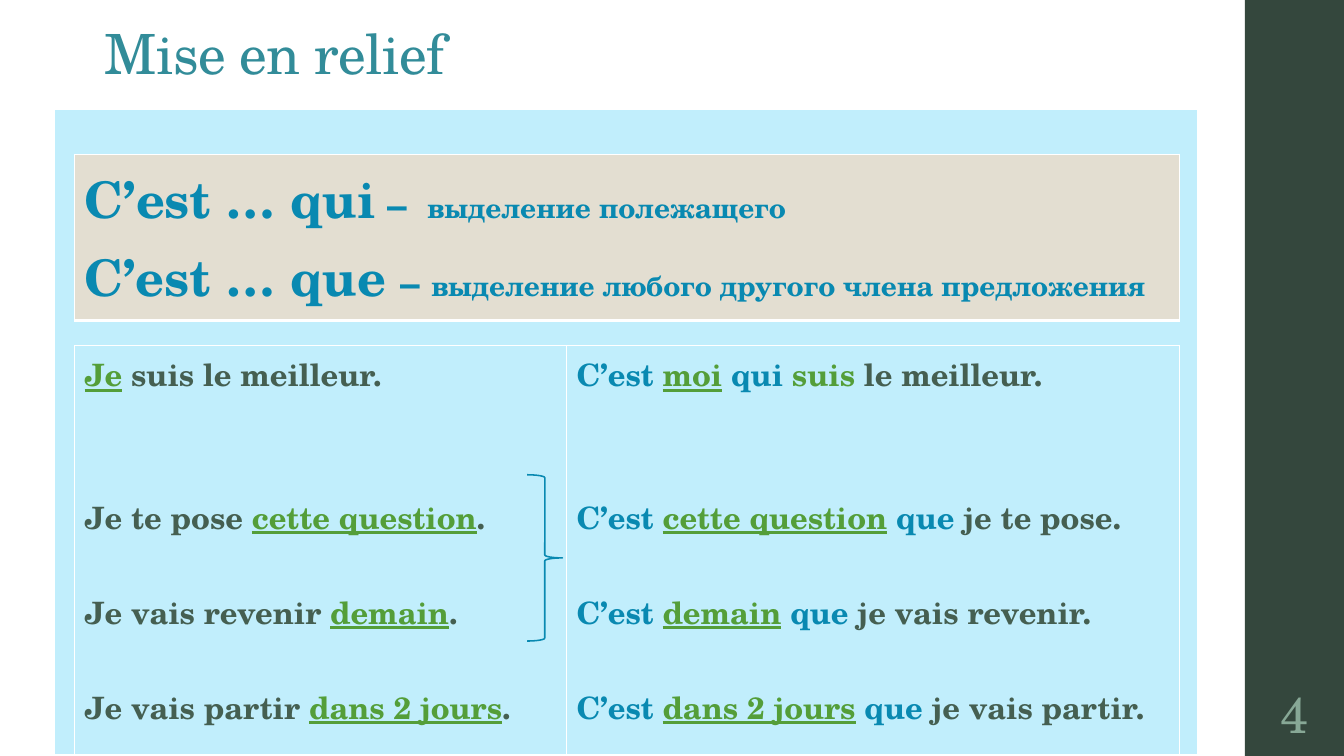
from dataclasses import dataclass
from typing import NamedTuple

from lxml.etree import SubElement
from pptx import Presentation
from pptx.dml.color import RGBColor
from pptx.enum.shapes import MSO_SHAPE as Preset
from pptx.enum.text import MSO_ANCHOR as Anchor, PP_ALIGN as Align
from pptx.oxml.ns import qn
from pptx.util import Inches, Pt


@dataclass(frozen=True)
class Theme:
    font: str = "TeX Gyre Schola"
    title: str = "328C99"
    sidebar: str = "34473D"
    number: str = "87A896"
    panel: str = "C1EEFC"
    rule: str = "E3DED1"
    frame: str = "FFFFFF"
    accent: str = "0989B1"
    stress: str = "549E39"
    body: str = "455F51"
    title_size: float = 39.6
    large: float = 36
    dash: float = 28
    gap: float = 24
    example: float = 22
    note: float = 20
    example_line: float = 33.9


class Box(NamedTuple):
    """Left, top, width and height as percentages of the slide."""
    left: float
    top: float
    width: float
    height: float


class Span(NamedTuple):
    text: str
    color: str
    size: float
    underline: bool = False


class Line(NamedTuple):
    spans: list[Span]
    lines_before: int = 0


THEME = Theme()
SIDEBAR = Box(92.63, 0, 7.37, 100)
TITLE = Box(7.05, 2.8, 84.45, 12)
PANEL = Box(4.05, 14.53, 85.05, 85.47)
RULES = Box(5.55, 20.4, 82.2, 22)
EXAMPLES = Box(5.55, 45.73, 82.2, 54.27)
EXAMPLE_COLUMNS = (36.6, 45.6)
BRACE = Box(39.22, 62.8, 2.63, 22)
NUMBER = Box(92.63, 90, 7.37, 8.67)

prs = Presentation()
prs.slide_width, prs.slide_height = Inches(13.333), Inches(7.5)
slide = prs.slides.add_slide(prs.slide_layouts[5])


def across(share: float) -> int:
    return round(prs.slide_width * share / 100)


def down(share: float) -> int:
    return round(prs.slide_height * share / 100)


def emu(box: Box) -> tuple[int, int, int, int]:
    return across(box.left), down(box.top), across(box.width), down(box.height)


def rgb(color: str) -> RGBColor:
    return RGBColor.from_string(color)


def write(paragraph, text: str, *, color: str, size: float, bold: bool = False,
          underline: bool = False, tracking: float = 0) -> None:
    run = paragraph.add_run()
    run.text = text
    font = run.font
    font.name, font.size, font.bold = THEME.font, Pt(size), bold
    font.underline = underline
    font.color.rgb = rgb(color)
    if tracking:
        run._r.get_or_add_rPr().set("spc", str(round(tracking * 100)))


def write_lines(frame, lines: list[Line]) -> None:
    for index, line in enumerate(lines):
        paragraph = frame.add_paragraph() if index else frame.paragraphs[0]
        paragraph.space_before = Pt(line.lines_before * THEME.example_line)
        for span in line.spans:
            write(paragraph, span.text, color=span.color, size=span.size,
                  bold=True, underline=span.underline)


def frame_cell(cell) -> None:
    """White cell border, heavier along the bottom."""
    properties = cell._tc.get_or_add_tcPr()
    for side, width in (("L", 1), ("R", 1), ("T", 1), ("B", 3)):
        border = SubElement(properties, qn(f"a:ln{side}"), w=str(Pt(width)))
        fill = SubElement(border, qn("a:solidFill"))
        SubElement(fill, qn("a:srgbClr"), val=THEME.frame)


def add_row(box: Box, columns: tuple[float, ...], fill: str,
            contents: list[list[Line]]) -> None:
    """One-row table with a list of lines in each cell."""
    table = slide.shapes.add_table(1, len(columns), *emu(box)).table
    for column, share in zip(table.columns, columns):
        column.width = across(share)
    for cell, lines in zip(table.rows[0].cells, contents):
        frame_cell(cell)
        cell.fill.solid()
        cell.fill.fore_color.rgb = rgb(fill)
        write_lines(cell.text_frame, lines)


def add_preset(preset: Preset, box: Box, *, fill: str = "", line: str = "") -> None:
    shape = slide.shapes.add_shape(preset, *emu(box))
    shape.shadow.inherit = False
    if fill:
        shape.fill.solid()
        shape.fill.fore_color.rgb = rgb(fill)
    else:
        shape.fill.background()
    if line:
        shape.line.color.rgb = rgb(line)
        shape.line.width = Pt(1.1)
    else:
        shape.line.fill.background()


def plain(text: str) -> Span:
    return Span(text, THEME.body, THEME.example)


def marker(text: str) -> Span:
    return Span(text, THEME.accent, THEME.example)


def stressed(text: str, underline: bool = True) -> Span:
    return Span(text, THEME.stress, THEME.example, underline)


def rule(*parts: tuple[str, float]) -> Line:
    return Line([Span(text, THEME.accent, size) for text, size in parts])


def add_title() -> None:
    title = slide.shapes.title
    title.left, title.top, title.width, title.height = emu(TITLE)
    title.text_frame.vertical_anchor = Anchor.TOP
    heading = title.text_frame.paragraphs[0]
    heading.alignment, heading.line_spacing = Align.LEFT, 0.9
    write(heading, "Mise en relief", color=THEME.title,
          size=THEME.title_size, tracking=-0.5)


def add_number() -> None:
    frame = slide.shapes.add_textbox(*emu(NUMBER)).text_frame
    frame.word_wrap = True
    frame.vertical_anchor = Anchor.MIDDLE
    frame.margin_left = frame.margin_right = Inches(0.05)
    frame.paragraphs[0].alignment = Align.CENTER
    write(frame.paragraphs[0], "4", color=THEME.number, size=THEME.large)


RULE_LINES = [
    rule(("C’est … qui", THEME.large), (" – ", THEME.dash), (" ", THEME.gap),
         ("выделение полежащего", THEME.note)),
    rule(("С’est … que ", THEME.large), ("– ", THEME.dash),
         ("выделение любого другого члена предложения", THEME.note)),
]
NEUTRAL = [Line([stressed("Je"), plain(" suis le meilleur.")])]
EMPHATIC = [Line([marker("C’est "), stressed("moi"), marker(" qui "),
                  stressed("suis", underline=False), plain(" le meilleur.")])]
for opening, focus, clause, blank_lines in (
        ("Je te pose ", "cette question", " je te pose.", 2),
        ("Je vais revenir ", "demain", " je vais revenir.", 1),
        ("Je vais partir ", "dans 2 jours", " je vais partir.", 1)):
    NEUTRAL.append(Line([plain(opening), stressed(focus), plain(".")], blank_lines))
    EMPHATIC.append(Line([marker("C’est "), stressed(focus), marker(" que"),
                          plain(clause)], blank_lines))

add_preset(Preset.RECTANGLE, SIDEBAR, fill=THEME.sidebar)
add_title()
add_row(PANEL, (PANEL.width,), THEME.panel, [[]])
add_number()
add_row(RULES, (RULES.width,), THEME.rule, [RULE_LINES])
add_row(EXAMPLES, EXAMPLE_COLUMNS, THEME.panel, [NEUTRAL, EMPHATIC])
add_preset(Preset.RIGHT_BRACE, BRACE, line=THEME.accent)
prs.save("out.pptx")
